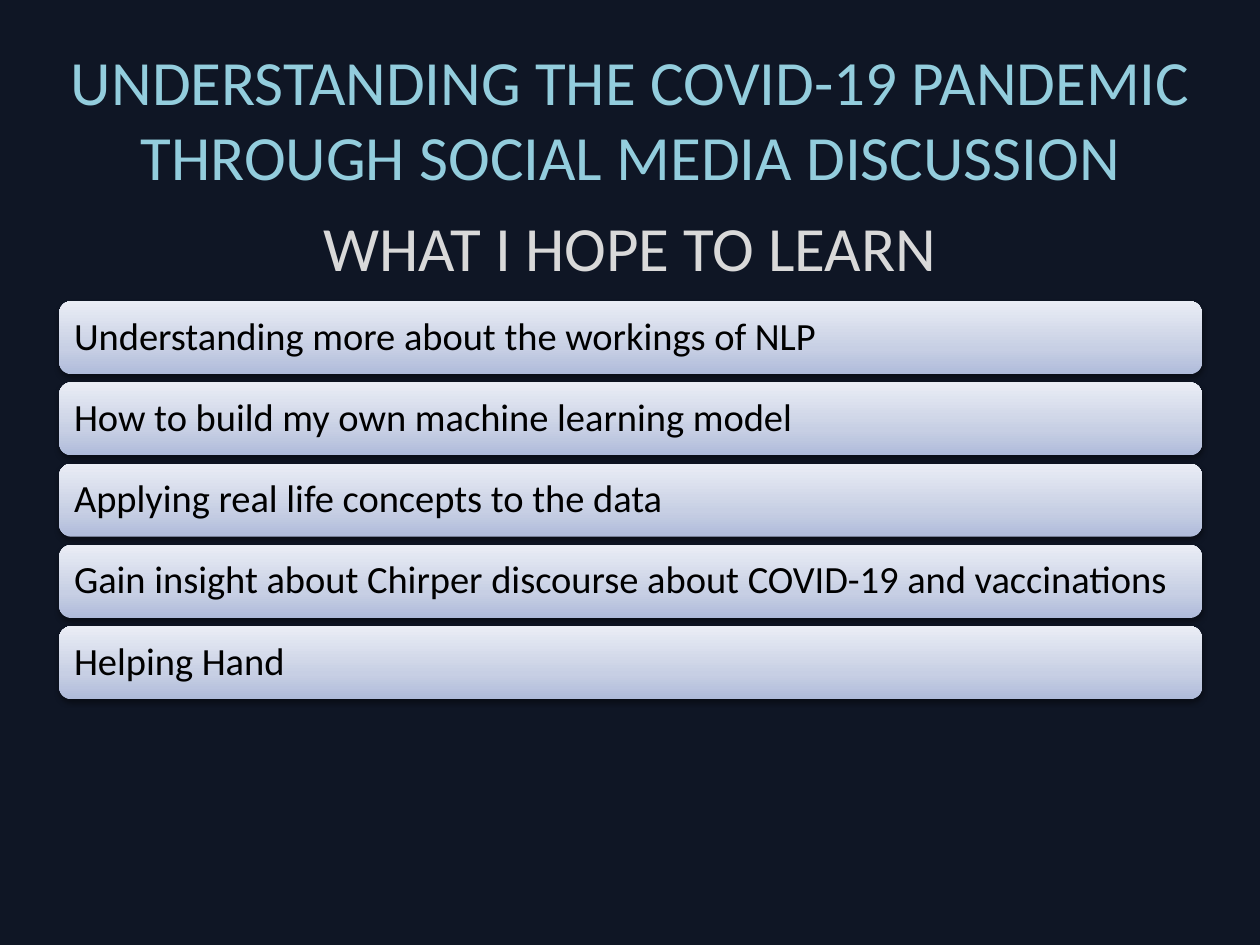
"""Build the slide listing what the pandemic discussion project should teach."""
import copy
from dataclasses import dataclass

import pptx
import pptx.dml.color
import pptx.enum.shapes
import pptx.enum.text
import pptx.oxml
import pptx.oxml.ns
import pptx.util
from pptx.dml.color import RGBColor
from pptx.util import Inches

FONT = "Calibri"
NAVY = RGBColor(0x0F, 0x16, 0x25)
SKY = RGBColor(0x93, 0xCD, 0xDD)
SILVER = RGBColor(0xD9, 0xD9, 0xD9)
BLACK = RGBColor(0x00, 0x00, 0x00)
BAR_GRADIENT = (
    (0, RGBColor(0xAF, 0xBB, 0xDA)),
    (0.35, RGBColor(0xC7, 0xCF, 0xE4)),
    (1, RGBColor(0xEA, 0xED, 0xF5)),
)
BAR_LEFT, BAR_TOP, BAR_WIDTH, BAR_HEIGHT = 0.47, 2.39, 9.07, 0.58
BAR_PITCH = 0.645


@dataclass(frozen=True)
class Heading:
    text: str
    left: float
    top: float
    width: float
    height: float
    color: RGBColor


HEADINGS = (
    Heading("UNDERSTANDING THE COVID-19 PANDEMIC THROUGH SOCIAL MEDIA DISCUSSION",
            0.12, 0.31, 9.77, 1.25, SKY),
    Heading("WHAT I HOPE TO LEARN", 2.15, 1.6, 5.7, 0.71, SILVER),
)
GOALS = (
    "Understanding more about the workings of NLP",
    "How to build my own machine learning model",
    "Applying real life concepts to the data",
    "Gain insight about Chirper discourse about COVID-19 and vaccinations",
    "Helping Hand",
)


def write(shape, text: str, size: float, color: RGBColor, alignment) -> None:
    """Put one formatted, vertically centred paragraph in a shape."""
    frame = shape.text_frame
    frame.word_wrap = True
    frame.vertical_anchor = pptx.enum.text.MSO_ANCHOR.MIDDLE
    frame.text = text
    paragraph = frame.paragraphs[0]
    paragraph.alignment = alignment
    font = paragraph.runs[0].font
    font.name = FONT
    font.size = pptx.util.Pt(size)
    font.color.rgb = color


def add_heading(slide, heading: Heading) -> None:
    """Draw a centred heading."""
    box = slide.shapes.add_textbox(Inches(heading.left), Inches(heading.top),
                                   Inches(heading.width), Inches(heading.height))
    write(box, heading.text, 36, heading.color, pptx.enum.text.PP_ALIGN.CENTER)


def shade_bar(bar) -> None:
    """Give a bar its three-stop gradient and soft shadow."""
    bar.fill.gradient()
    bar.fill.gradient_angle = 90
    stop_list = bar.element.spPr.find(".//" + pptx.oxml.ns.qn("a:gsLst"))
    stop_list.append(copy.deepcopy(stop_list[-1]))
    for stop, (position, color) in zip(bar.fill.gradient_stops, BAR_GRADIENT):
        stop.position = position
        stop.color.rgb = color
    bar.line.fill.background()
    bar.shadow.inherit = False
    effects = bar.element.spPr.find(pptx.oxml.ns.qn("a:effectLst"))
    effects.append(pptx.oxml.parse_xml(
        f'<a:outerShdw {pptx.oxml.ns.nsdecls("a")} blurRad="{pptx.util.Pt(3.1)}" '
        f'dist="{pptx.util.Pt(1.6)}" dir="5400000" rotWithShape="0">'
        '<a:srgbClr val="000000"><a:alpha val="38000"/></a:srgbClr></a:outerShdw>'))


def add_goal(slide, index: int, goal: str) -> None:
    """Draw one goal bar at its place in the stack."""
    bar = slide.shapes.add_shape(
        pptx.enum.shapes.MSO_SHAPE.ROUNDED_RECTANGLE,
        Inches(BAR_LEFT), Inches(BAR_TOP + index * BAR_PITCH),
        Inches(BAR_WIDTH), Inches(BAR_HEIGHT))
    shade_bar(bar)
    write(bar, goal, 22, BLACK, pptx.enum.text.PP_ALIGN.LEFT)
    frame = bar.text_frame
    frame.margin_left = frame.margin_right = Inches(0.09)
    frame.margin_top = frame.margin_bottom = Inches(0.09)
    frame.paragraphs[0].line_spacing = 0.9


def main() -> None:
    """Build and save the slide."""
    deck = pptx.Presentation()
    deck.slide_width, deck.slide_height = Inches(10), Inches(7.5)
    slide = deck.slides.add_slide(deck.slide_layouts[6])
    slide.background.fill.solid()
    slide.background.fill.fore_color.rgb = NAVY
    for heading in HEADINGS:
        add_heading(slide, heading)
    for index, goal in enumerate(GOALS):
        add_goal(slide, index, goal)
    deck.save("out.pptx")


if __name__ == "__main__":
    main()
